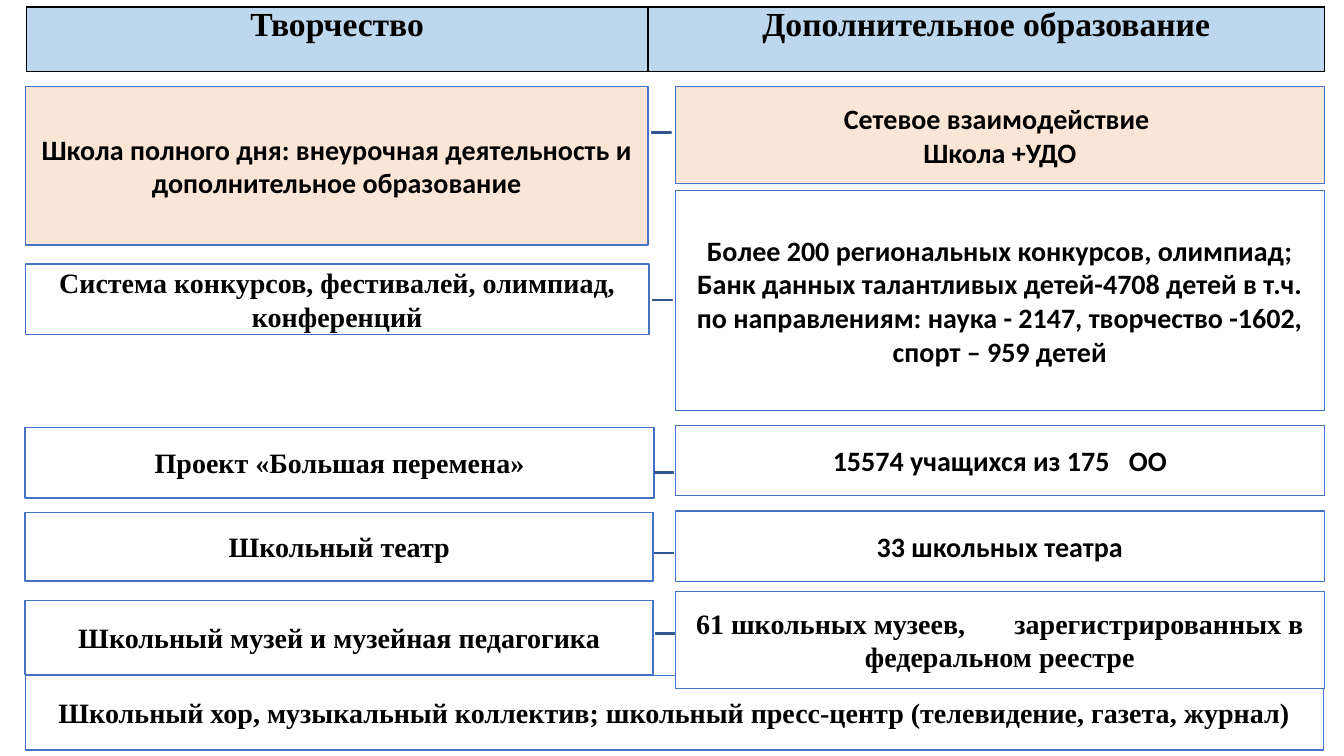
import pptx
import pptx.util
import pptx.dml.color
import pptx.enum.shapes
import pptx.enum.text
import pptx.oxml.ns
from lxml import etree

Pt = pptx.util.Pt
RGBColor = pptx.dml.color.RGBColor
SHAPES = pptx.enum.shapes.MSO_SHAPE
CENTER = pptx.enum.text.PP_ALIGN.CENTER
MIDDLE = pptx.enum.text.MSO_ANCHOR.MIDDLE
qn = pptx.oxml.ns.qn

BLACK = RGBColor(0x00, 0x00, 0x00)
WHITE = RGBColor(0xFF, 0xFF, 0xFF)
SKY = RGBColor(0xBD, 0xD7, 0xEE)
PEACH = RGBColor(0xFB, 0xE5, 0xD6)
BLUE = RGBColor(0x44, 0x72, 0xC4)
DARK_BLUE = RGBColor(0x32, 0x54, 0x91)
SERIF, SANS = "Times New Roman", "Calibri"

LEFT, RIGHT = 18, 482.4
RIGHT_WIDTH = 463.5

# top, width, height, fill, font, text
DIRECTIONS = [
    (62, 445, 113, PEACH, SANS,
     "Школа полного дня: внеурочная деятельность и дополнительное образование"),
    (188.6, 445.7, 50.4, WHITE, SERIF,
     "Система конкурсов, фестивалей, олимпиад, конференций"),
    (305.3, 449.3, 50.4, WHITE, SERIF, "Проект «Большая перемена»"),
    (366, 448.6, 49, WHITE, SERIF, "Школьный театр"),
    (429.1, 448.6, 52.6, WHITE, SERIF, "Школьный музей и музейная педагогика"),
]
# top, height, fill, font, paragraphs, width of the gap that stands at each "|"
RESULTS = [
    (62, 69.1, PEACH, SANS, ["Сетевое взаимодействие ", "Школа +УДО"], 0),
    (136.1, 157, WHITE, SANS,
     ["Более 200 региональных конкурсов, олимпиад;",
      "Банк данных талантливых детей-4708 детей в т.ч. по направлениям: "
      "наука - 2147, творчество -1602, спорт – 959 детей"], 0),
    (303.8, 50.4, WHITE, SANS, ["15574 учащихся из 175|ОО"], 9),
    (365, 50.4, WHITE, SANS, ["33 школьных театра"], 0),
    (422.6, 69.1, WHITE, SERIF,
     ["61 школьных музеев,|зарегистрированных в федеральном реестре"], 30),
]
LINKS = [(463, 92.9), (463.7, 212.4), (465.1, 335.5), (465.1, 393.1), (465.8, 450.7)]


def add_bold_run(paragraph, text, font, size):
    run = paragraph.add_run()
    run.text = text
    run.font.name = font
    run.font.size = Pt(size)
    run.font.bold = True
    run.font.color.rgb = BLACK
    return run


def write_paragraph(paragraph, text, font, size, gap=0):
    """Write centred text; each "|" becomes one space widened by gap points."""
    paragraph.alignment = CENTER
    for index, part in enumerate(text.split("|")):
        if index:
            space = add_bold_run(paragraph, " ", font, size)
            space.font._element.set("spc", str(gap * 100))
        add_bold_run(paragraph, part, font, size)


def add_outlined(slide, kind, box, fill, line):
    shape = slide.shapes.add_shape(kind, *(Pt(length) for length in box))
    shape.shadow.inherit = False
    shape.fill.solid()
    shape.fill.fore_color.rgb = fill
    shape.line.color.rgb = line
    shape.line.width = Pt(1)
    return shape


def add_card(slide, box, fill, font, paragraphs, gap=0):
    frame = add_outlined(slide, SHAPES.RECTANGLE, box, fill, BLUE).text_frame
    frame.word_wrap = True
    frame.vertical_anchor = MIDDLE
    for index, text in enumerate(paragraphs):
        paragraph = frame.add_paragraph() if index else frame.paragraphs[0]
        write_paragraph(paragraph, text, font, 20, gap)


def add_cell_borders(cell, color):
    properties = cell._tc.get_or_add_tcPr()
    for side in ("a:lnL", "a:lnR", "a:lnT", "a:lnB"):
        border = etree.SubElement(properties, qn(side), w=str(Pt(1)))
        fill = etree.SubElement(border, qn("a:solidFill"))
        etree.SubElement(fill, qn("a:srgbClr"), val=str(color))


def add_header(slide, left, top, widths, height):
    headings = ["Творчество", "Дополнительное образование"]
    table = slide.shapes.add_table(
        1, len(headings), Pt(left), Pt(top), Pt(sum(widths)), Pt(height)).table
    table.first_row = table.horz_banding = False
    for index, (heading, width) in enumerate(zip(headings, widths)):
        table.columns[index].width = Pt(width)
        cell = table.cell(0, index)
        cell.margin_left = cell.margin_right = Pt(4.5)
        cell.margin_top = cell.margin_bottom = 0
        add_cell_borders(cell, BLACK)
        cell.fill.solid()
        cell.fill.fore_color.rgb = SKY
        write_paragraph(cell.text_frame.paragraphs[0], heading, SERIF, 24)


def add_directions(slide, left):
    for top, width, height, fill, font, text in DIRECTIONS:
        add_card(slide, (left, top, width, height), fill, font, [text])


def add_results(slide, left, width):
    for top, height, fill, font, paragraphs, gap in RESULTS:
        add_card(slide, (left, top, width, height), fill, font, paragraphs, gap)


def add_links(slide, width, height):
    for left, top in LINKS:
        add_outlined(slide, SHAPES.MATH_MINUS, (left, top, width, height), BLUE, DARK_BLUE)


def main():
    deck = pptx.Presentation()
    deck.slide_width, deck.slide_height = Pt(960), Pt(540)
    slide = deck.slides.add_slide(deck.slide_layouts[6])
    add_header(slide, 18.7, 5, [444.2, 483.1], 46)
    add_card(slide, (LEFT, 482.4, 927.4, 53.3), WHITE, SERIF,
             ["Школьный хор, музыкальный коллектив; "
              "школьный пресс-центр (телевидение, газета, журнал)"])
    add_directions(slide, LEFT)
    add_results(slide, RIGHT, RIGHT_WIDTH)
    add_links(slide, 18.7, 3.6)
    deck.save("out.pptx")


if __name__ == "__main__":
    main()
